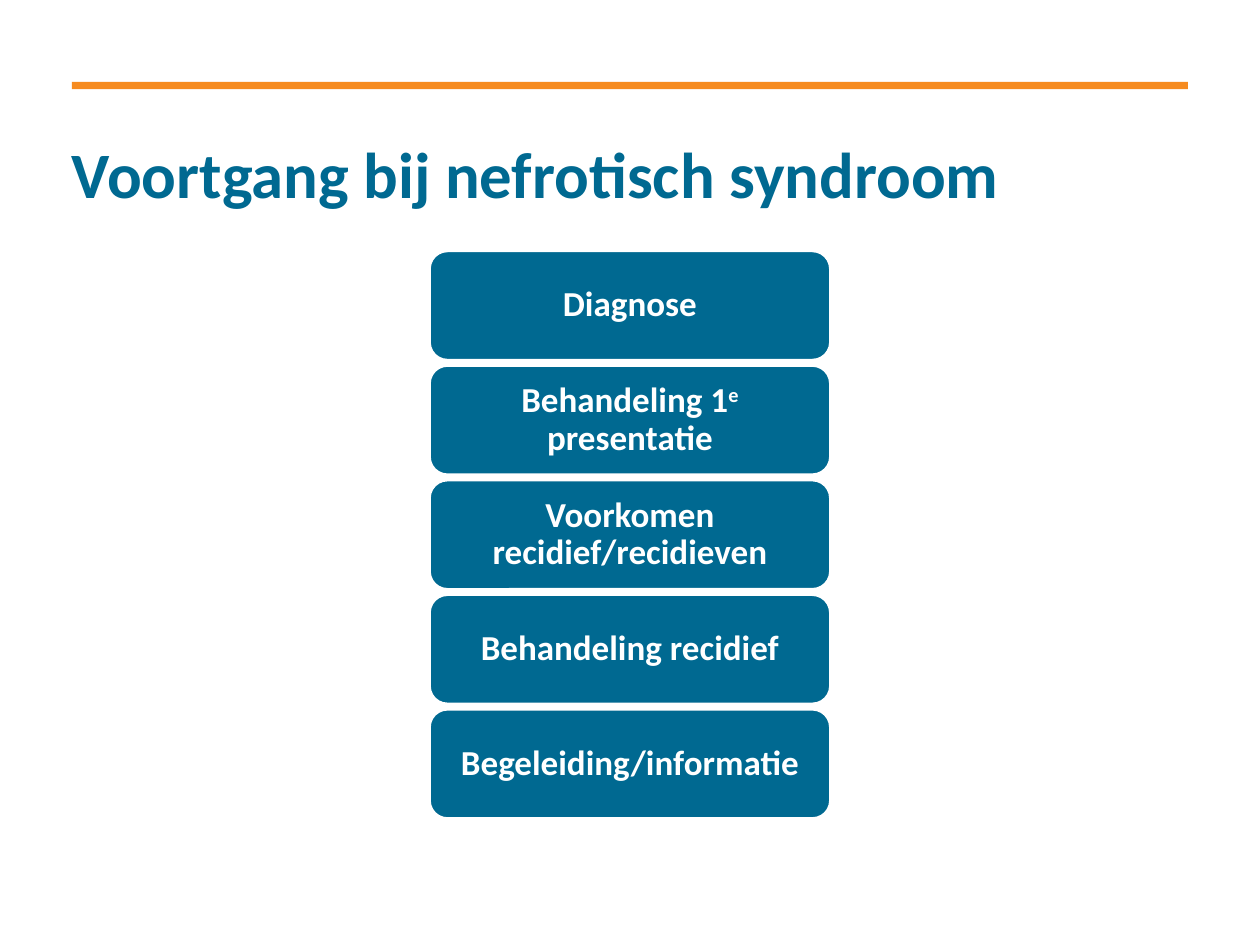
from dataclasses import dataclass

from pptx import Presentation
from pptx import util as u
from pptx.dml.color import RGBColor
from pptx.enum import shapes, text

BLUE = RGBColor(0x00, 0x69, 0x91)
ORANGE = RGBColor(0xF6, 0x8B, 0x1F)
WHITE = RGBColor(0xFF, 0xFF, 0xFF)
FONT = "Calibri"

SLIDE_WIDTH, SLIDE_HEIGHT = 25.4, 19.05
MARGIN = 1.45
CONTENT_WIDTH = SLIDE_WIDTH - 2 * MARGIN
STEP_WIDTH, STEP_HEIGHT = 8.1, 2.22
STEP_TOP, STEP_PITCH = 5.05, 2.31


@dataclass
class Step:
    label: str
    superscript: str = ""
    rest: str = ""


STEPS = [
    Step("Diagnose"),
    Step("Behandeling 1", "e", " presentatie"),
    Step("Voorkomen recidief/recidieven"),
    Step("Behandeling recidief"),
    Step("Begeleiding/informatie"),
]


def add_run(paragraph, content: str, *, size: float, color: RGBColor,
            baseline: int = 0) -> None:
    """Add a bold run; baseline is the raise in percent."""
    run = paragraph.add_run()
    run.text = content
    run.font.name = FONT
    run.font.size = u.Pt(size)
    run.font.bold = True
    run.font.color.rgb = color
    if baseline:
        run.font._element.set("baseline", str(baseline * 1000))


def set_frame(frame, *, horizontal: float = 0, vertical: float = 0) -> None:
    """Wrap the text, centre it vertically and set the insets in cm."""
    frame.word_wrap = True
    frame.auto_size = text.MSO_AUTO_SIZE.NONE
    frame.vertical_anchor = text.MSO_ANCHOR.MIDDLE
    frame.margin_left = frame.margin_right = u.Cm(horizontal)
    frame.margin_top = frame.margin_bottom = u.Cm(vertical)


def add_block(slide, kind, left: float, top: float, width: float,
              height: float, fill: RGBColor):
    shape = slide.shapes.add_shape(
        kind, u.Cm(left), u.Cm(top), u.Cm(width), u.Cm(height))
    shape.shadow.inherit = False
    shape.fill.solid()
    shape.fill.fore_color.rgb = fill
    shape.line.fill.background()
    return shape


def add_step(slide, step: Step, top: float) -> None:
    shape = add_block(slide, shapes.MSO_SHAPE.ROUNDED_RECTANGLE,
                      (SLIDE_WIDTH - STEP_WIDTH) / 2, top,
                      STEP_WIDTH, STEP_HEIGHT, BLUE)
    shape.line.color.rgb = WHITE
    shape.line.width = u.Pt(2)
    set_frame(shape.text_frame, horizontal=0.2, vertical=0.1)
    paragraph = shape.text_frame.paragraphs[0]
    paragraph.alignment = text.PP_ALIGN.CENTER
    paragraph.line_spacing = 0.9
    for content, baseline in ((step.label, 0), (step.superscript, 30),
                              (step.rest, 0)):
        if content:
            add_run(paragraph, content, size=20, color=WHITE,
                    baseline=baseline)


def main() -> None:
    presentation = Presentation()
    presentation.slide_width = u.Cm(SLIDE_WIDTH)
    presentation.slide_height = u.Cm(SLIDE_HEIGHT)
    slide = presentation.slides.add_slide(presentation.slide_layouts[5])

    # Bar above the title
    add_block(slide, shapes.MSO_SHAPE.RECTANGLE,
              MARGIN, 1.65, CONTENT_WIDTH, 0.15, ORANGE)

    # Title
    title = slide.shapes.title
    title.left, title.top = u.Cm(MARGIN), u.Cm(2.79)
    title.width, title.height = u.Cm(CONTENT_WIDTH), u.Cm(1.47)
    set_frame(title.text_frame)
    paragraph = title.text_frame.paragraphs[0]
    paragraph.alignment = text.PP_ALIGN.LEFT
    paragraph.line_spacing = u.Pt(42)
    add_run(paragraph, "Voortgang bij nefrotisch syndroom",
            size=37, color=BLUE)

    # Stack of steps
    for index, step in enumerate(STEPS):
        add_step(slide, step, STEP_TOP + index * STEP_PITCH)

    presentation.save("out.pptx")


if __name__ == "__main__":
    main()
